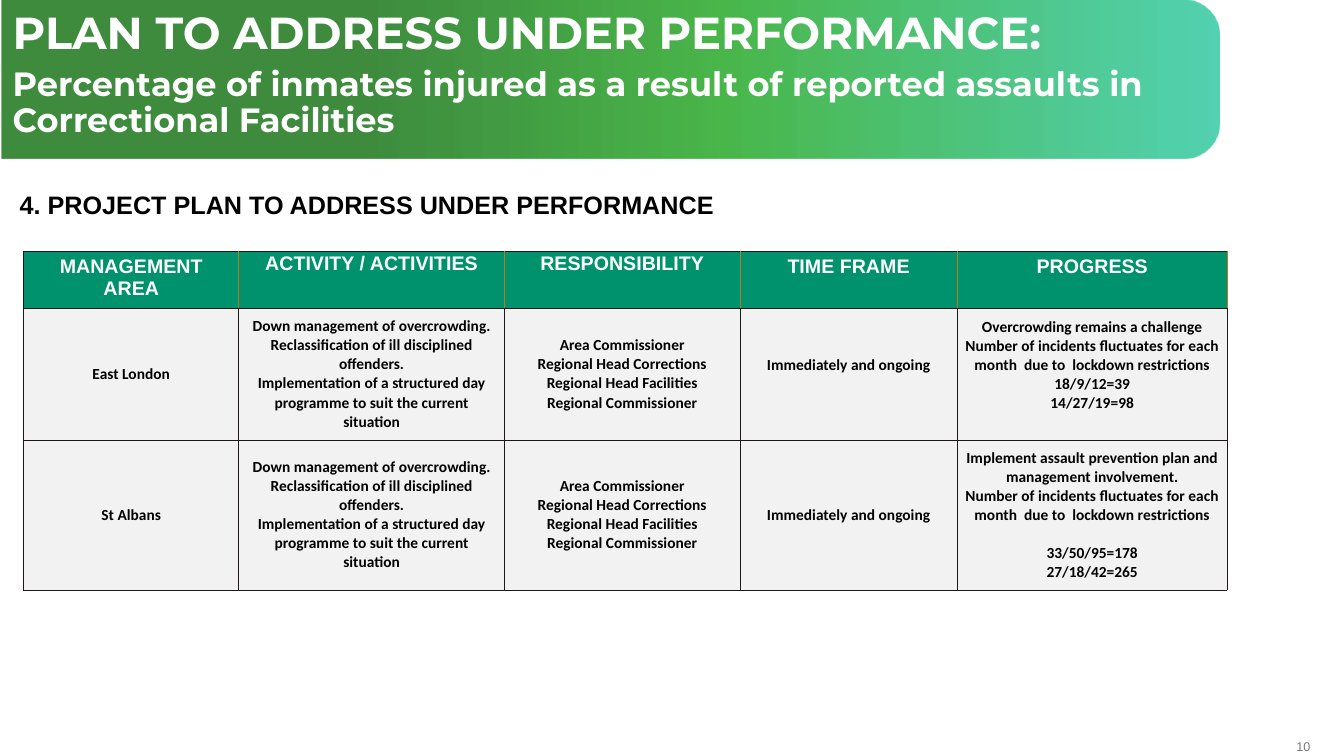
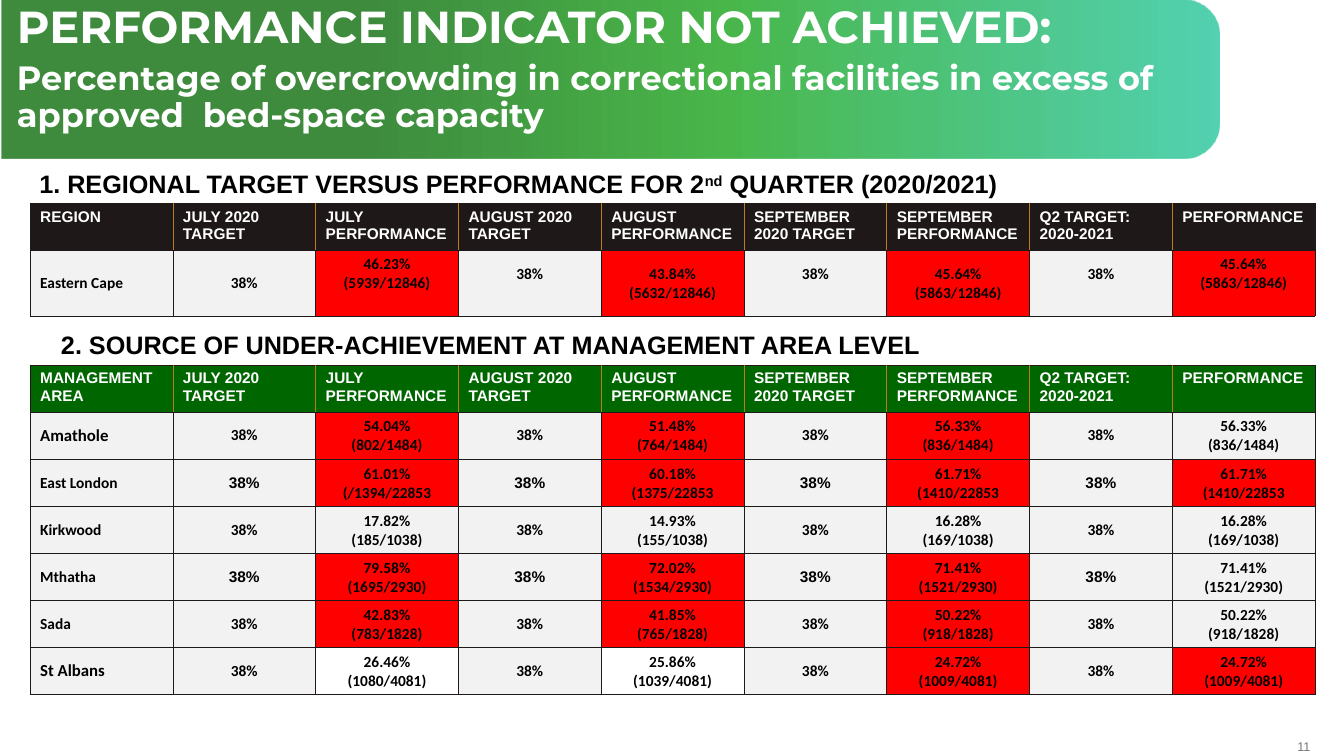
from dataclasses import dataclass

from lxml import etree
from pptx import Presentation
from pptx.dml.color import RGBColor
from pptx.enum.shapes import MSO_SHAPE
from pptx.enum.text import MSO_ANCHOR, PP_ALIGN
from pptx.oxml.ns import qn
from pptx.util import Pt

LEFT, CENTER, RIGHT = PP_ALIGN.LEFT, PP_ALIGN.CENTER, PP_ALIGN.RIGHT
TOP, MIDDLE = MSO_ANCHOR.TOP, MSO_ANCHOR.MIDDLE
ROUND_TWO = MSO_SHAPE.ROUND_2_SAME_RECTANGLE

WHITE, BLACK, GREY = "FFFFFF", "000000", "77787B"
INK, AMBER, TEAL, GREEN = "1E1918", "BF7B17", "00926C", "006600"
PALE, RED = "F2F2F2", "FF0000"
BAND_STOPS = [(30, GREEN, 75), (59, "009900", 71), (100, "00BC8D", 67)]

INSETS = (7.2, 3.6, 7.2, 3.6)
NARROW = (5, 3.6, 5, 3.6)
TIGHT = (1, 1, 1, 0)


def rgb(value):
    return RGBColor.from_string(value)


def raised(insets):
    """Insets that lift centred text by half a line."""
    left, _, right, _ = insets
    return left, 0, right, 13.5


@dataclass
class Cell:
    """One table cell; each item of lines is a paragraph."""
    lines: list
    fill: str = PALE
    size: float = 11
    font: str = "Calibri"
    color: str = BLACK
    align: PP_ALIGN = CENTER
    anchor: MSO_ANCHOR = MIDDLE
    insets: tuple = INSETS
    gap_before: int = -1  # index of a paragraph set off by one line


class Deck:
    """Holds the shared style and the current slide."""

    def __init__(self):
        self.prs = Presentation()
        self.prs.slide_width, self.prs.slide_height = Pt(960), Pt(540)
        self.slide = None

    def add_slide(self, number, title, subtitle, title_at):
        self.slide = self.prs.slides.add_slide(self.prs.slide_layouts[6])
        self.page_number(number)
        self.band()
        self.title(title, subtitle, *title_at)

    def run(self, paragraph, text, size, font, color, bold=True):
        run = paragraph.add_run()
        run.text = text
        run.font.size, run.font.name, run.font.bold = Pt(size), font, bold
        run.font.color.rgb = rgb(color)
        return run

    def text_frame(self, left, top, width, height):
        box = self.slide.shapes.add_textbox(Pt(left), Pt(top), Pt(width), Pt(height))
        box.text_frame.word_wrap = True
        return box.text_frame

    def page_number(self, number):
        frame = self.text_frame(908, 528, 28, 11)
        self.set_insets(frame, (0, 0, 0, 0))
        frame.vertical_anchor = MIDDLE
        frame.paragraphs[0].alignment = RIGHT
        self.run(frame.paragraphs[0], number, 9, "Arial", GREY, bold=False)

    def band(self):
        """Gradient band with round right corners: a tall shape turned by 90°."""
        length, depth = 870, 113
        offset = (length - depth) / 2
        band = self.slide.shapes.add_shape(
            ROUND_TWO, Pt(1 + offset), Pt(-offset), Pt(depth), Pt(length))
        band.rotation = 90
        band.adjustments[0] = 0.23
        band.shadow.inherit = False
        band.line.fill.background()
        band.fill.gradient()
        band.fill.gradient_angle = 90
        stops = band.fill._xPr.find(".//" + qn("a:gsLst"))
        for stop in list(stops):
            stops.remove(stop)
        for position, color, opacity in BAND_STOPS:
            stop = etree.SubElement(stops, qn("a:gs"), pos=str(position * 1000))
            shade = etree.SubElement(stop, qn("a:srgbClr"), val=color)
            etree.SubElement(shade, qn("a:alpha"), val=str(opacity * 1000))

    def title(self, title, subtitle, left, top):
        frame = self.text_frame(left, top, 862.5, 41)
        first, second = frame.paragraphs[0], frame.add_paragraph()
        first.space_after = Pt(6)
        for paragraph, text, size in ((first, title, 32), (second, subtitle, 24)):
            paragraph.line_spacing = 0.9
            self.run(paragraph, text, size, "Montserrat", WHITE)

    def heading(self, left, top, text, superscript="", rest=""):
        paragraph = self.text_frame(left, top, 720, 29).paragraphs[0]
        self.run(paragraph, text, 18, "Arial", BLACK)
        if superscript:
            raised_run = self.run(paragraph, superscript, 18, "Arial", BLACK)
            raised_run._r.get_or_add_rPr().set("baseline", "30000")
            self.run(paragraph, rest, 18, "Arial", BLACK)

    def set_insets(self, target, insets):
        (target.margin_left, target.margin_top,
         target.margin_right, target.margin_bottom) = map(Pt, insets)

    def borders(self, cell, left, right):
        properties = cell._tc.get_or_add_tcPr()
        for side, color in (("L", left), ("R", right), ("T", INK), ("B", INK)):
            line = etree.SubElement(properties, qn("a:ln" + side), w=str(Pt(0.5)))
            fill = etree.SubElement(line, qn("a:solidFill"))
            etree.SubElement(fill, qn("a:srgbClr"), val=color)

    def fill_cell(self, cell, content):
        cell.fill.solid()
        cell.fill.fore_color.rgb = rgb(content.fill)
        cell.vertical_anchor = content.anchor
        self.set_insets(cell, content.insets)
        frame = cell.text_frame
        for index, line in enumerate(content.lines):
            paragraph = frame.add_paragraph() if index else frame.paragraphs[0]
            paragraph.alignment = content.align
            if index == content.gap_before:
                paragraph.space_before = Pt(13.5)
            self.run(paragraph, line, content.size, content.font, content.color)

    def table(self, left, top, widths, heights, rows, header_end=INK):
        """Header row first; its inner separators are amber."""
        table = self.slide.shapes.add_table(
            len(rows), len(widths), Pt(left), Pt(top),
            Pt(sum(widths)), Pt(sum(heights))).table
        table.first_row = table.horz_banding = False
        for column, width in zip(table.columns, widths):
            column.width = Pt(width)
        last = len(widths) - 1
        for r, (height, row) in enumerate(zip(heights, rows)):
            table.rows[r].height = Pt(height)
            inner, end = (INK, INK) if r else (AMBER, header_end)
            for c, content in enumerate(row):
                cell = table.cell(r, c)
                self.borders(cell, inner if c else INK, inner if c < last else end)
                self.fill_cell(cell, content)


def header(text, fill, size=11, align=LEFT, insets=INSETS):
    return Cell([text], fill, size, "Arial", WHITE, align, TOP, insets)


PLAN_HEADER = [
    ("MANAGEMENT AREA", INSETS), ("ACTIVITY / ACTIVITIES", TIGHT),
    ("RESPONSIBILITY", TIGHT), ("TIME FRAME", INSETS), ("PROGRESS", INSETS)]
ACTIVITIES = [
    "Down management of overcrowding.",
    "Reclassification of ill disciplined offenders.",
    "Implementation of a structured day programme to suit the current situation"]
RESPONSIBLE = ["Area Commissioner", "Regional Head Corrections",
               "Regional Head Facilities", "Regional Commissioner"]
TIME_FRAME = ["Immediately and ongoing"]
FLUCTUATION = ("Number of incidents fluctuates for each month  due to  "
               "lockdown restrictions")

MONTH_HEADER = [
    "JULY 2020 TARGET", "JULY PERFORMANCE", "AUGUST 2020 TARGET",
    "AUGUST PERFORMANCE", "SEPTEMBER 2020 TARGET", "SEPTEMBER PERFORMANCE",
    "Q2 TARGET: 2020-2021", "PERFORMANCE"]
TARGET = "38%"
# Area, its size, font of the targets, (rate, count, fill) for each period
AREAS = [
    ("Amathole", 12, "Calibri", [
        ("54.04%", "(802/1484)", RED), ("51.48%", "(764/1484)", RED),
        ("56.33%", "(836/1484)", RED), ("56.33%", "(836/1484)", PALE)]),
    ("East London", 11, "Arial", [
        ("61.01%", "(/1394/22853", RED), ("60.18%", "(1375/22853", RED),
        ("61.71%", "(1410/22853", RED), ("61.71%", "(1410/22853", RED)]),
    ("Kirkwood", 11, "Calibri", [
        ("17.82%", "(185/1038)", PALE), ("14.93%", "(155/1038)", PALE),
        ("16.28%", "(169/1038)", PALE), ("16.28%", "(169/1038)", PALE)]),
    ("Mthatha", 11, "Arial", [
        ("79.58%", "(1695/2930)", RED), ("72.02%", "(1534/2930)", RED),
        ("71.41%", "(1521/2930)", RED), ("71.41%", "(1521/2930)", PALE)]),
    ("Sada", 11, "Calibri", [
        ("42.83%", "(783/1828)", RED), ("41.85%", "(765/1828)", RED),
        ("50.22%", "(918/1828)", RED), ("50.22%", "(918/1828)", PALE)]),
    ("St Albans", 12, "Calibri", [
        ("26.46%", "(1080/4081)", WHITE), ("25.86%", "(1039/4081)", WHITE),
        ("24.72%", "(1009/4081)", RED), ("24.72%", "(1009/4081)", RED)]),
]
REGION = ("Eastern Cape", 11, "Calibri", [
    ("46.23%", "(5939/12846)", RED), ("43.84%", "(5632/12846)", RED),
    ("45.64%", "(5863/12846)", RED), ("45.64%", "(5863/12846)", RED)])
REGION_RAISED = (2, 3, 5, 7, 8)


def month_header(first, fill):
    return [header(text, fill) for text in [first] + MONTH_HEADER]


def performance_row(name, name_size, target_font, periods):
    row = [Cell([name], size=name_size, align=LEFT)]
    for rate, count, fill in periods:
        row += [Cell([TARGET], font=target_font), Cell([rate, count], fill)]
    return row


def plan_slide(deck):
    deck.add_slide(
        "10", "PLAN TO ADDRESS UNDER PERFORMANCE:",
        "Percentage of inmates injured as a result of reported assaults in "
        "Correctional Facilities", (2, 4))
    deck.heading(7, 132, "4. PROJECT PLAN TO ADDRESS UNDER PERFORMANCE")
    east_london = [
        Cell(["East London"]), Cell(ACTIVITIES, insets=NARROW), Cell(RESPONSIBLE),
        Cell(TIME_FRAME, insets=raised(INSETS)),
        Cell(["Overcrowding remains a challenge", FLUCTUATION,
              "18/9/12=39", "14/27/19=98"], insets=raised(NARROW))]
    st_albans = [
        Cell(["St Albans"]), Cell(ACTIVITIES, insets=NARROW), Cell(RESPONSIBLE),
        Cell(TIME_FRAME),
        Cell(["Implement assault prevention plan and management involvement.",
              FLUCTUATION, "33/50/95=178", "27/18/42=265"],
             insets=NARROW, gap_before=2)]
    heads = [header(text, TEAL, 14, CENTER, insets) for text, insets in PLAN_HEADER]
    deck.table(17, 179.3, [153.5, 190, 168, 155.5, 192.5], [40.5, 94.3, 107],
               [heads, east_london, st_albans], header_end=AMBER)


def overcrowding_slide(deck):
    deck.add_slide(
        "11", "PERFORMANCE INDICATOR NOT ACHIEVED:",
        "Percentage of overcrowding in correctional facilities in excess of "
        "approved  bed-space capacity", (5, 0))
    deck.heading(21, 117, "1. REGIONAL TARGET VERSUS PERFORMANCE FOR 2",
                 "nd", " QUARTER (2020/2021)")
    deck.heading(36.5, 232, "2. SOURCE OF UNDER-ACHIEVEMENT AT MANAGEMENT AREA LEVEL")
    widths, row_height = [102] * 9, 33.6
    region = performance_row(*REGION)
    for column in REGION_RAISED:
        region[column].insets = raised(INSETS)
    deck.table(21.5, 145.5, widths, [row_height, 46.5],
               [month_header("REGION", INK), region])
    areas = [performance_row(*area) for area in AREAS]
    deck.table(21.5, 260.7, widths, [row_height] * (len(areas) + 1),
               [month_header("MANAGEMENT AREA", GREEN)] + areas)


def main():
    deck = Deck()
    plan_slide(deck)
    overcrowding_slide(deck)
    deck.prs.save("out.pptx")


if __name__ == "__main__":
    main()
